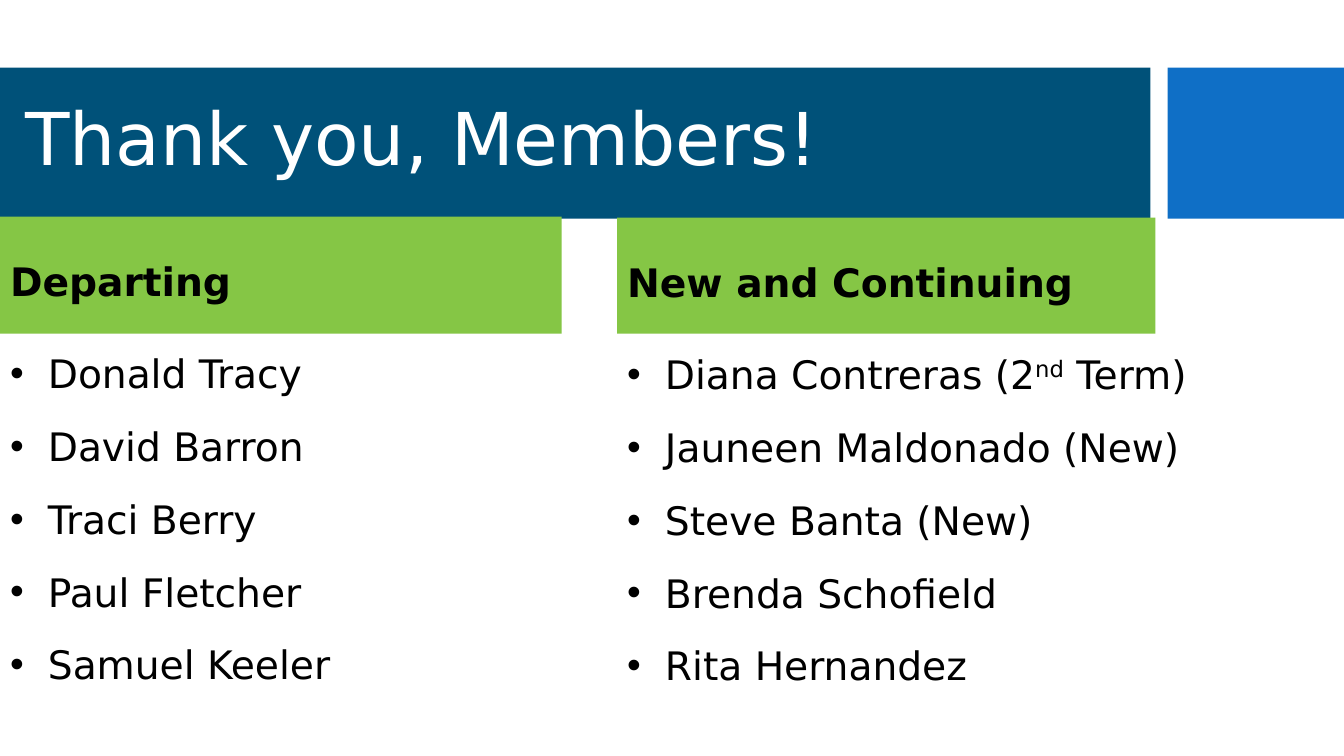
"""Build the slide that thanks departing, new and continuing members."""
from pptx import Presentation
from pptx.dml.color import RGBColor
from pptx.enum.shapes import MSO_SHAPE
from pptx.enum.text import MSO_ANCHOR, MSO_AUTO_SIZE, PP_ALIGN
from pptx.util import Inches, Pt

RECTANGLE = MSO_SHAPE.RECTANGLE
TOP, MIDDLE = MSO_ANCHOR.TOP, MSO_ANCHOR.MIDDLE
NO_AUTOFIT = MSO_AUTO_SIZE.NONE
LEFT = PP_ALIGN.LEFT
NAVY = RGBColor(0x00, 0x51, 0x79)
BLUE = RGBColor(0x0F, 0x6F, 0xC6)
GREEN = RGBColor(0x85, 0xC6, 0x45)
WHITE = RGBColor(0xFF, 0xFF, 0xFF)
BLACK = RGBColor(0x00, 0x00, 0x00)
FONT = "DejaVu Sans"
COMPARISON_LAYOUT = 4


def place(shape, box, anchor):
    shape.left, shape.top, shape.width, shape.height = map(Inches, box)
    shape.text_frame.word_wrap = True
    shape.text_frame.auto_size = NO_AUTOFIT
    shape.text_frame.vertical_anchor = anchor


def write(paragraph, texts, size, color, bold, line_spacing, space_before):
    paragraph.alignment = LEFT
    paragraph.line_spacing = line_spacing
    paragraph.space_before = Pt(space_before)
    for text in texts:
        run = paragraph.add_run()
        run.text = text
        run.font.name = FONT
        run.font.size = Pt(size)
        run.font.bold = bold
        run.font.color.rgb = color
        if text == "nd":
            run.font._element.set("baseline", "30000")


presentation = Presentation()
presentation.slide_width = Inches(13.33)
presentation.slide_height = Inches(7.5)
slide = presentation.slides.add_slide(presentation.slide_layouts[COMPARISON_LAYOUT])
title, *body_placeholders = list(slide.placeholders)[:5]

for left, width, color in [(0, 11.41, NAVY), (11.58, 1.75, BLUE)]:
    band = slide.shapes.add_shape(RECTANGLE, Inches(left), Inches(0.67), Inches(width), Inches(1.5))
    band.shadow.inherit = False
    band.fill.solid()
    band.fill.fore_color.rgb = color
    band.line.fill.background()
    title._element.addprevious(band._element)

place(title, (0.15, 0.82, 11.11, 1.18), MIDDLE)
write(title.text_frame.paragraphs[0], ["Thank you, Members!"], 52, WHITE, False, 0.9, 0)

columns = [
    ("Departing", (0, 2.15, 5.57, 1.16), (0, 3.3, 6.7, 3.98),
     [["Donald Tracy"], ["David Barron"], ["Traci Berry"], ["Paul Fletcher"], ["Samuel Keeler"]]),
    ("New and Continuing", (6.12, 2.16, 5.34, 1.15), (6.12, 3.31, 7.22, 3.18),
     [["Diana Contreras (2", "nd", " Term)"], ["Jauneen Maldonado (New)"], ["Steve Banta (New)"],
      ["Brenda Schofield"], ["Rita Hernandez"]]),
]
for column, heading, member_list in zip(columns, body_placeholders[::2], body_placeholders[1::2]):
    heading_text, heading_box, list_box, members = column
    place(heading, heading_box, MIDDLE)
    heading.fill.solid()
    heading.fill.fore_color.rgb = GREEN
    write(heading.text_frame.paragraphs[0], [heading_text], 28, BLACK, True, 1.25, 10)

    place(member_list, list_box, TOP)
    for index, texts in enumerate(members):
        frame = member_list.text_frame
        paragraph = frame.add_paragraph() if index else frame.paragraphs[0]
        write(paragraph, texts, 28, BLACK, False, 1.25, 10)

presentation.save("out.pptx")
